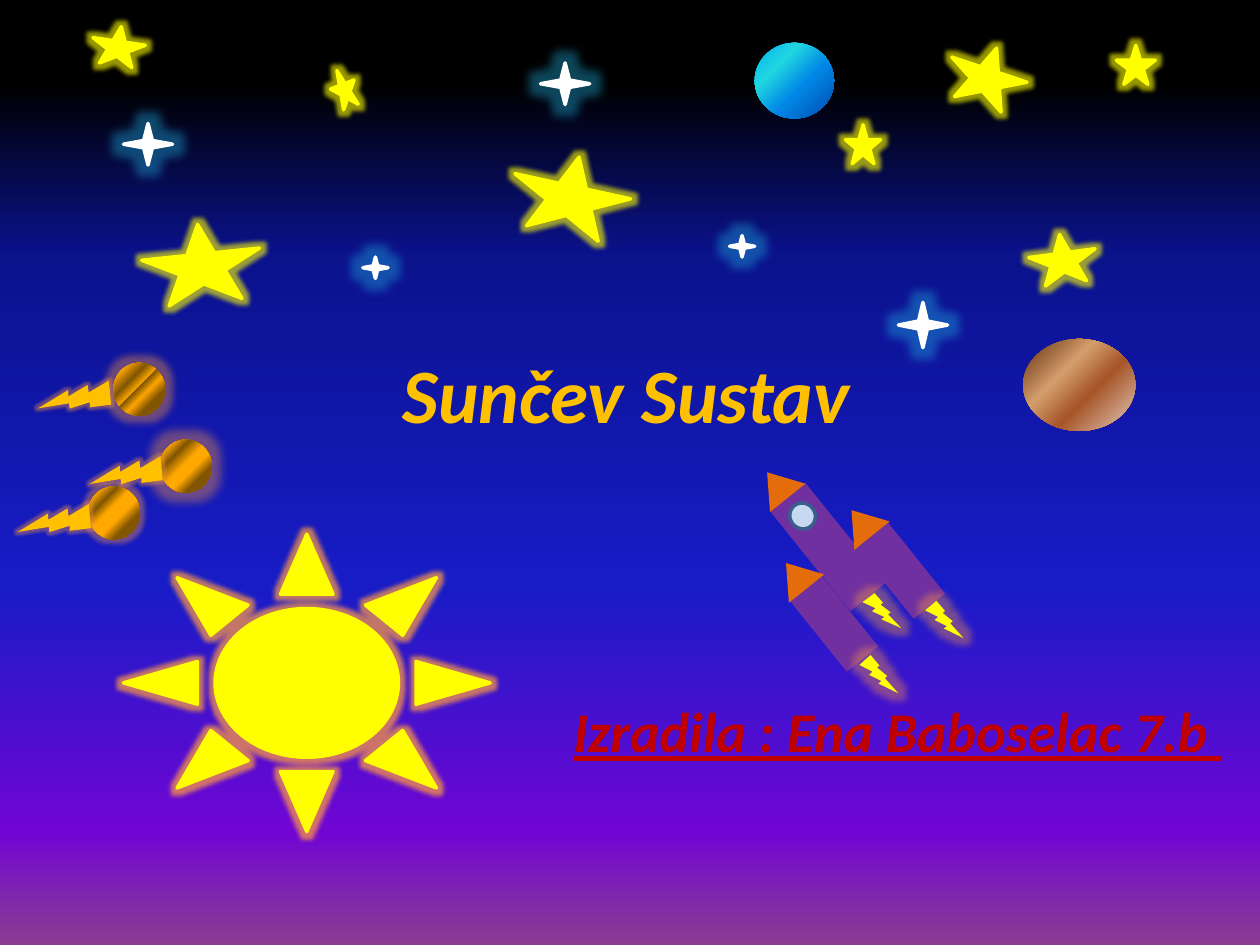
"""Build the title slide of a presentation about the solar system."""
from dataclasses import dataclass

from lxml import etree
from pptx import Presentation
from pptx import util as u
from pptx.dml.color import RGBColor
from pptx.enum import shapes, text
from pptx.oxml.ns import qn

KIND = shapes.MSO_SHAPE


@dataclass(frozen=True)
class Theme:
    """Colours, fonts, type sizes and gradient stops."""
    font: str = "Calibri"
    title_size: int = 44
    author_size: int = 32
    outline: int = 2
    gold: str = "FFC000"
    red: str = "C00000"
    yellow: str = "FFFF00"
    white: str = "FFFFFF"
    purple: str = "7030A0"
    orange: str = "E46C0A"
    window: str = "C6D9F1"
    window_rim: str = "3A5F8C"
    warm_glow: str = "F79646"
    cool_glow: str = "21B0E0"
    ember: str = "825600"
    flame: str = "FFA800"
    linear: str = '<a:lin ang="{}" scaled="0"/>'
    corner: str = '<a:path path="circle"><a:fillToRect l="100000" t="100000"/></a:path>'
    sky: tuple = ((9, "000000"), (27, "0A128C"), (62, "181CC7"),
                  (88, "7005D4"), (100, "8C3D91"))
    blue_planet: tuple = ((0, "00B0F0"), (30, "21D6E0"), (59, "0087E6"), (88, "005CBF"))
    brown_planet: tuple = ((9, "D6B19C"), (40, "A65528"), (64, "D49E6C"), (98, "663012"))


THEME = Theme()


def drawing_xml(markup):
    """Parse one DrawingML element."""
    uri = "http://schemas.openxmlformats.org/drawingml/2006/main"
    return etree.fromstring(markup.replace(" ", f' xmlns:a="{uri}" ', 1))


def paint_gradient(fill, owner, stops, direction):
    """Fill an object with a gradient of any number of stops."""
    fill.gradient()
    gradient = next(owner.iter(qn("a:gradFill")))
    for child in list(gradient):
        gradient.remove(child)
    marks = "".join(f'<a:gs pos="{place * 1000}"><a:srgbClr val="{color}"/></a:gs>'
                    for place, color in stops)
    gradient.append(drawing_xml(f"<a:gsLst >{marks}</a:gsLst>"))
    gradient.append(drawing_xml(direction))


def add_figure(canvas, kind, place, fill=None, line=None, turn=0, flip=False):
    """Add a preset shape with a plain fill and an optional outline."""
    figure = canvas.add_shape(kind, *map(u.Inches, place))
    figure.shadow.inherit = False
    figure.rotation = turn
    if fill:
        figure.fill.solid()
        figure.fill.fore_color.rgb = RGBColor.from_string(fill)
    if line:
        figure.line.color.rgb = RGBColor.from_string(line)
        figure.line.width = u.Pt(THEME.outline)
    else:
        figure.line.fill.background()
    if flip:
        next(figure.element.iter(qn("a:xfrm"))).set("flipH", "1")
    return figure


def add_glow(figure, color, radius, opacity):
    """Surround a shape with a glow of a radius in points."""
    effects = next(figure.element.iter(qn("a:effectLst")))
    effects.append(drawing_xml(
        f'<a:glow rad="{u.Pt(radius)}"><a:srgbClr val="{color}">'
        f'<a:alpha val="{opacity * 1000}"/></a:srgbClr></a:glow>'))


def add_planet(canvas, place, stops, direction):
    """Add a round body with a gradient."""
    planet = add_figure(canvas, KIND.OVAL, place)
    paint_gradient(planet.fill, planet.element, stops, direction)
    return planet


def set_heading(box, place, wording, size, color, anchor, underline=None):
    """Place and format a one-line placeholder."""
    box.left, box.top, box.width, box.height = map(u.Inches, place)
    frame = box.text_frame
    frame.text = wording
    frame.vertical_anchor = anchor
    para = frame.paragraphs[0]
    para.alignment = text.PP_ALIGN.CENTER
    font = para.runs[0].font
    font.name, font.size = THEME.font, u.Pt(size)
    font.bold = font.italic = True
    font.underline = underline
    font.color.rgb = RGBColor.from_string(color)


def add_sun(canvas):
    """Add the glowing sun."""
    sun = add_figure(canvas, KIND.SUN, (0.98, 4.24, 2.91, 2.36), THEME.yellow, THEME.yellow)
    add_glow(sun, THEME.warm_glow, 5, 75)


def add_stars(canvas):
    """Add the yellow stars and the white sparkles."""
    stars = [((1.13, 1.78, 0.94, 0.62), 354.1, False),
             ((2.63, 0.55, 0.2, 0.31), 338.9, False),
             ((4.06, 1.24, 0.94, 0.62), 12.3, False),
             ((6.71, 0.99, 0.28, 0.31), 0, True),
             ((8.17, 1.86, 0.53, 0.39), 352.4, False),
             ((8.86, 0.36, 0.31, 0.31), 0, False),
             ((0.73, 0.21, 0.42, 0.31), 8.3, True),
             ((7.52, 0.37, 0.63, 0.47), 18.5, True)]
    for place, turn, flip in stars:
        star = add_figure(canvas, KIND.STAR_5_POINT, place, THEME.yellow, THEME.yellow,
                          turn, flip)
        add_glow(star, THEME.yellow, 5, 60)
    sparkles = [(4.29, 0.5, 0.39, 0.33), (0.98, 0.98, 0.39, 0.33), (7.13, 2.4, 0.39, 0.36),
                (5.79, 1.87, 0.2, 0.17), (2.88, 2.04, 0.2, 0.17)]
    for place in sparkles:
        sparkle = add_figure(canvas, KIND.STAR_4_POINT, place, THEME.white, THEME.white)
        add_glow(sparkle, THEME.cool_glow, 11, 40)


def add_rocket(canvas):
    """Add the rocket as one group of hulls, noses, window and flames."""
    parts = canvas.add_group_shape().shapes
    tilt = 321.2
    for hull in [(6.46, 4.59, 0.32, 0.72), (6.39, 3.83, 0.36, 1.02), (6.99, 4.17, 0.32, 0.72)]:
        add_figure(parts, KIND.RECTANGLE, hull, THEME.purple, turn=tilt)
    for left, top in [(6.14, 4.44), (6.66, 4.02), (5.99, 3.72)]:
        add_figure(parts, KIND.ISOSCELES_TRIANGLE, (left, top, 0.36, 0.26), THEME.orange,
                   turn=tilt)
    add_figure(parts, KIND.OVAL, (6.27, 3.99, 0.2, 0.21), THEME.window, THEME.window_rim, tilt)
    flames = [((6.84, 5.19, 0.26, 0.34), 349), ((6.86, 4.7, 0.27, 0.31), 350.5),
              ((7.36, 4.76, 0.26, 0.33), 349.6)]
    for place, turn in flames:
        flame = add_figure(parts, KIND.LIGHTNING_BOLT, place, THEME.yellow, turn=turn)
        add_glow(flame, THEME.warm_glow, 8, 40)


def add_comets(canvas):
    """Add the three comets as one group of heads and tails."""
    parts = canvas.add_group_shape().shapes
    dark, light = THEME.ember, THEME.flame
    start = [(0, dark), (14, light)]
    end = [(60, light), (75, dark), (87, dark), (100, light)]
    heads = [(1.27, 3.49, 11, [(29, dark), (47, light)]),
             (0.7, 3.86, 5, [(29, dark), (43, light)]),
             (0.9, 2.88, 8, [(33, dark), (47, light), (48, dark)])]
    for left, top, radius, middle in heads:
        head = add_planet(parts, (left, top, 0.41, 0.42), start + middle + end,
                          THEME.linear.format(45 * 60000))
        add_glow(head, THEME.warm_glow, radius, 40)
    for left, top in [(0.41, 2.89), (0.82, 3.49), (0.25, 3.87)]:
        tail = add_figure(parts, KIND.LIGHTNING_BOLT, (left, top, 0.43, 0.52), THEME.gold,
                          turn=113.7)
        add_glow(tail, THEME.warm_glow, 3, 40)


def main():
    """Build and save the deck."""
    deck = Presentation()
    deck.slide_width, deck.slide_height = u.Inches(10), u.Inches(7.5)
    page = deck.slides.add_slide(deck.slide_layouts[0])
    paint_gradient(page.background.fill, page.element, THEME.sky,
                   THEME.linear.format(90 * 60000))
    set_heading(page.shapes.title, (0.72, 2.31, 8.5, 1.61), "Sunčev Sustav",
                THEME.title_size, THEME.gold, text.MSO_ANCHOR.MIDDLE)
    set_heading(page.placeholders[1], (4.37, 5.48, 5.5, 1.02), "Izradila : Ena Baboselac 7.b ",
                THEME.author_size, THEME.red, text.MSO_ANCHOR.TOP, True)
    add_sun(page.shapes)
    add_stars(page.shapes)
    add_rocket(page.shapes)
    add_planet(page.shapes, (5.99, 0.34, 0.63, 0.6), THEME.blue_planet,
               THEME.linear.format(45 * 60000))
    add_planet(page.shapes, (8.12, 2.69, 0.89, 0.73), THEME.brown_planet, THEME.corner)
    add_comets(page.shapes)
    deck.save("out.pptx")


if __name__ == "__main__":
    main()
